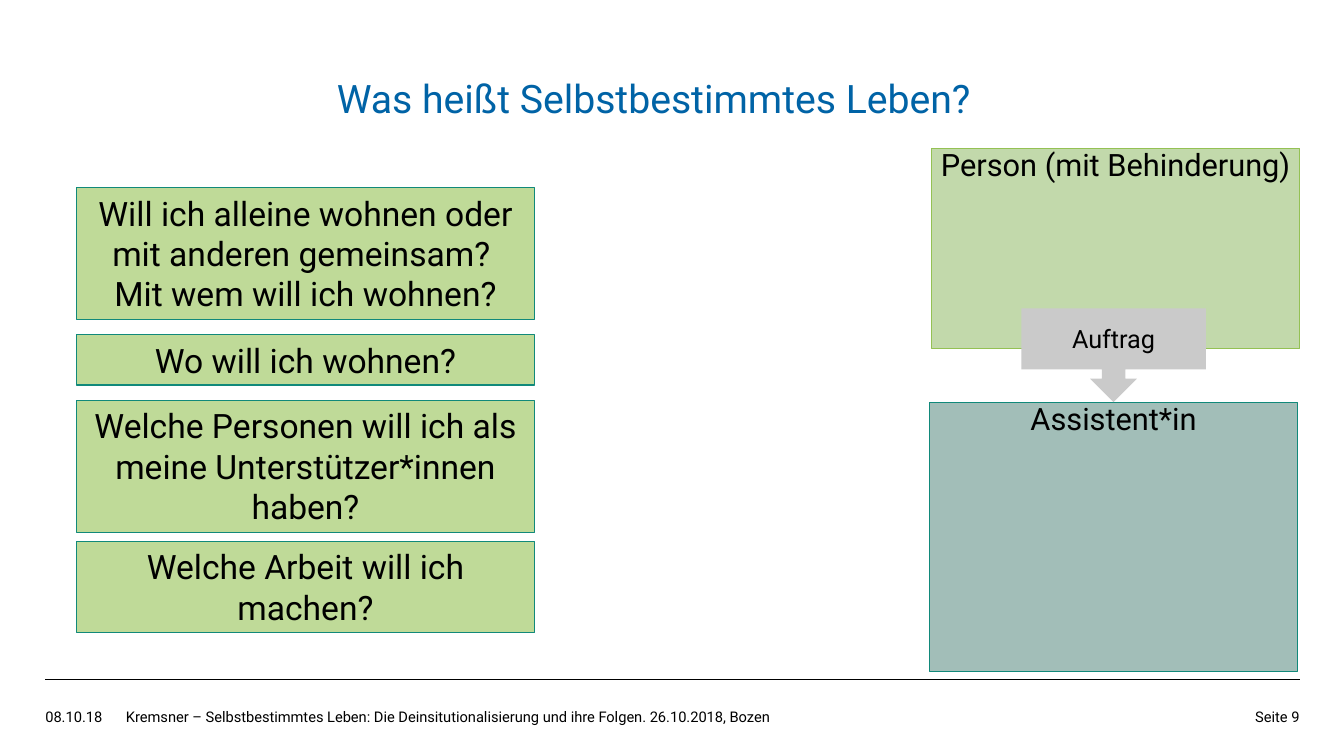
import pptx
import pptx.util
import pptx.dml.color
import pptx.enum.shapes
import pptx.enum.text
import pptx.oxml.ns
import lxml.etree

Inches = pptx.util.Inches
SHAPES = pptx.enum.shapes.MSO_SHAPE
ALIGN = pptx.enum.text.PP_ALIGN
ANCHOR = pptx.enum.text.MSO_ANCHOR
AUTO_SIZE = pptx.enum.text.MSO_AUTO_SIZE

FONT = "Roboto"
BLACK, BLUE, TEAL = "000000", "0063A6", "11897A"
QUESTION_GREEN = "BFDA98"


def color(hex_code):
    return pptx.dml.color.RGBColor.from_string(hex_code)


def write(shape, lines, size, align=ALIGN.LEFT, anchor=ANCHOR.TOP,
          hex_code=BLACK, spacing=None, margins=(0, 0)):
    """Fill a shape with one paragraph, its lines parted by line breaks."""
    frame = shape.text_frame
    frame.word_wrap = True
    frame.auto_size = AUTO_SIZE.NONE
    frame.vertical_anchor = anchor
    frame.margin_left = frame.margin_right = Inches(margins[0])
    frame.margin_top = frame.margin_bottom = Inches(margins[1])
    para = frame.paragraphs[0]
    para.alignment = align
    if spacing:
        para.line_spacing = spacing
    for index, line in enumerate(lines):
        if index:
            para.add_line_break()
        run = para.add_run()
        run.text = line
        run.font.size = pptx.util.Pt(size)
        run.font.name = FONT
        run.font.color.rgb = color(hex_code)


def add_block(page, kind, box, fill, outline=None):
    shape = page.shapes.add_shape(kind, *map(Inches, box))
    shape.shadow.inherit = False
    shape.fill.solid()
    shape.fill.fore_color.rgb = color(fill)
    if outline:
        shape.line.color.rgb = color(outline)
        shape.line.width = pptx.util.Pt(0.75)
    else:
        shape.line.fill.background()
    return shape


def add_title(page, box):
    title = page.shapes.title
    title.left, title.top, title.width, title.height = map(Inches, box)
    write(title, ["Was heißt Selbstbestimmtes Leben?"], 28,
          anchor=ANCHOR.BOTTOM, hex_code=BLUE, spacing=0.9)


def add_footer(page, box):
    """Draw the rule along the top of the box and three texts below it."""
    left, top, width, height = box
    rule = page.shapes.add_connector(
        pptx.enum.shapes.MSO_CONNECTOR.STRAIGHT,
        Inches(left), Inches(top), Inches(left + width), Inches(top))
    rule.line.color.rgb = color(BLACK)
    rule.line.width = pptx.util.Pt(0.75)
    properties = rule._element.spPr
    lxml.etree.SubElement(properties, pptx.oxml.ns.qn("a:effectLst"))

    text_height = 0.4
    text_top = top + height - text_height
    entries = [
        (0, 0.79, "08.10.18", ALIGN.LEFT),
        (0.8, 8.53, "Kremsner – Selbstbestimmtes Leben: Die Deinsitutionalisierung "
                    "und ihre Folgen. 26.10.2018, Bozen", ALIGN.LEFT),
        (width - 0.91, 0.91, "Seite 9", ALIGN.RIGHT),
    ]
    for offset, text_width, text, align in entries:
        field = page.shapes.add_textbox(Inches(left + offset), Inches(text_top),
                                        Inches(text_width), Inches(text_height))
        write(field, [text], 10.5, align)


def add_assistance(page, box):
    """Stack the person above the assistant, joined by the order arrow."""
    left, top, width, height = box
    person_height, assistant_height = 1.99, 2.67
    assistant_top = top + height - assistant_height
    panels = [
        ("Assistent*in", (left, assistant_top, width, assistant_height),
         "A2BEB8", TEAL),
        ("Person (mit Behinderung)", (left + 0.02, top, width, person_height),
         "C2D9AB", "94C154"),
    ]
    for text, panel_box, fill, outline in panels:
        panel = add_block(page, SHAPES.RECTANGLE, panel_box, fill, outline)
        write(panel, [text], 22, ALIGN.CENTER, spacing=0.95)

    order_width, order_height = 1.83, 0.93
    order_box = (left + (width - order_width) / 2, assistant_top - order_height,
                 order_width, order_height)
    order = add_block(page, SHAPES.DOWN_ARROW_CALLOUT, order_box, "CACACA")
    write(order, ["Auftrag"], 18, ALIGN.CENTER, ANCHOR.MIDDLE, margins=(0.1, 0.05))


def add_questions(page, box):
    left, top, width, _ = box
    questions = [
        (0, 1.31, ["Will ich alleine wohnen oder mit anderen gemeinsam? ",
                   "Mit wem will ich wohnen?"]),
        (1.46, 0.5, ["Wo will ich wohnen?"]),
        (2.11, 1.31, ["Welche Personen will ich als meine Unterstützer*innen haben?"]),
        (3.51, 0.91, ["Welche Arbeit will ich machen?"]),
    ]
    for offset, height, lines in questions:
        question = add_block(page, SHAPES.RECTANGLE, (left, top + offset, width, height),
                             QUESTION_GREEN, TEAL)
        write(question, lines, 24, ALIGN.CENTER, margins=(0.1, 0.05))
        question.text_frame.auto_size = AUTO_SIZE.SHAPE_TO_FIT_TEXT


def main():
    deck = pptx.Presentation()
    deck.slide_width = Inches(13.33)
    deck.slide_height = Inches(7.5)
    page = deck.slides.add_slide(deck.slide_layouts[5])
    add_footer(page, (0.45, 6.74, 12.44, 0.68))
    add_title(page, (3.34, 0.31, 9.33, 0.9))
    add_assistance(page, (9.22, 1.47, 3.65, 5.19))
    add_questions(page, (0.76, 1.86, 4.54, 4.42))
    deck.save("out.pptx")


if __name__ == "__main__":
    main()
